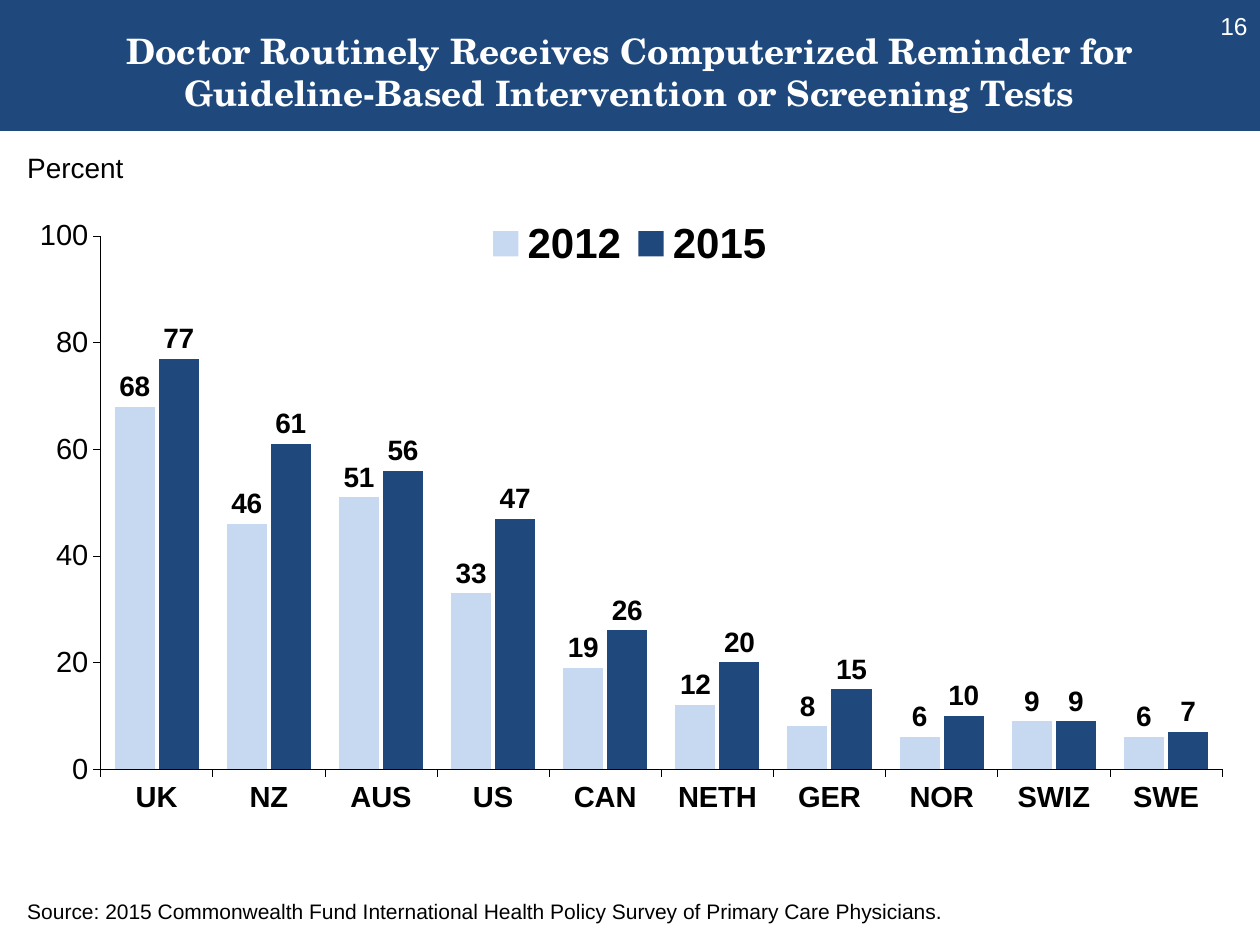
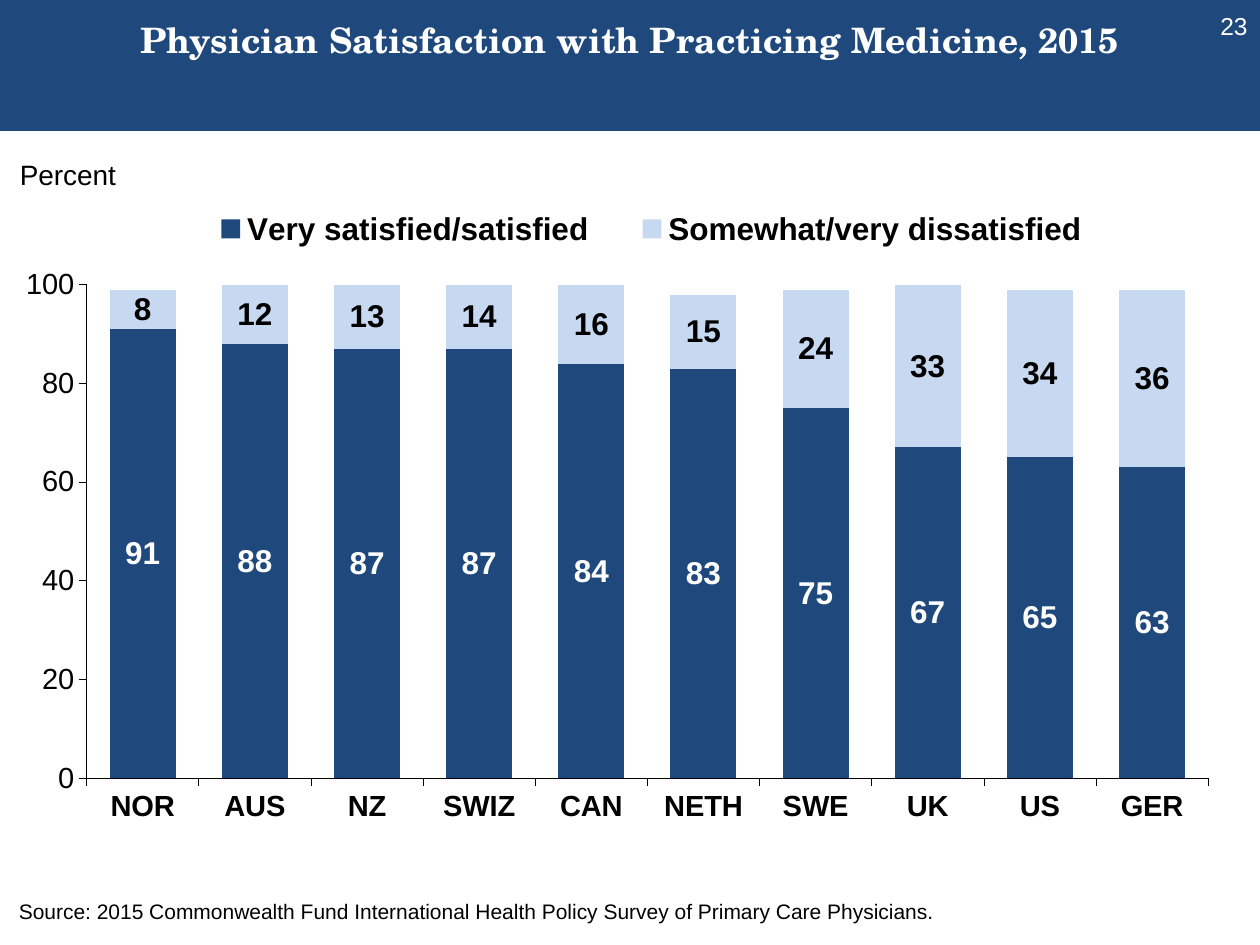
from dataclasses import dataclass

import lxml.etree
import pptx
import pptx.chart.data
import pptx.dml.color
import pptx.enum.chart
import pptx.enum.shapes
import pptx.enum.text
import pptx.oxml.ns
import pptx.util

Cm = pptx.util.Cm
Pt = pptx.util.Pt
RGBColor = pptx.dml.color.RGBColor
ChartType = pptx.enum.chart.XL_CHART_TYPE
LabelPosition = pptx.enum.chart.XL_LABEL_POSITION
Align = pptx.enum.text.PP_ALIGN
Anchor = pptx.enum.text.MSO_ANCHOR

NAVY = RGBColor(0x1F, 0x49, 0x7D)
PALE_BLUE = RGBColor(0xC6, 0xD9, 0xF1)
WHITE = RGBColor(0xFF, 0xFF, 0xFF)
BLACK = RGBColor(0, 0, 0)
BODY_FONT = "Arial"
TITLE_FONT = "TeX Gyre Schola"
SLIDE_WIDTH = 25.4
SOURCE = (
    "Source: 2015 Commonwealth Fund International Health Policy Survey "
    "of Primary Care Physicians."
)


@dataclass(frozen=True)
class Box:
    left: float
    top: float
    width: float
    height: float

    def lengths(self):
        return Cm(self.left), Cm(self.top), Cm(self.width), Cm(self.height)


@dataclass(frozen=True)
class Answer:
    name: str
    percents: tuple[int, ...]
    color: RGBColor
    label_color: RGBColor = BLACK


@dataclass(frozen=True)
class SurveyChart:
    kind: ChartType
    area: Box
    plot: Box
    legend: Box
    legend_size: int
    label_size: int
    label_position: LabelPosition
    overlap: int
    countries: tuple[str, ...]
    answers: tuple[Answer, ...]


@dataclass(frozen=True)
class SurveySlide:
    title: str
    title_box: Box
    number: str
    unit_box: Box
    source_box: Box
    chart: SurveyChart


SLIDES = (
    SurveySlide(
        title="Doctor Routinely Receives Computerized Reminder for\v"
        "Guideline-Based Intervention or Screening Tests",
        title_box=Box(0, 0.46, SLIDE_WIDTH, 2.03),
        number="16",
        unit_box=Box(0.3, 2.92, 11.48, 0.94),
        source_box=Box(0.3, 17.98, 20.65, 0.76),
        chart=SurveyChart(
            kind=ChartType.COLUMN_CLUSTERED,
            area=Box(0.76, 4.06, 23.88, 13.16),
            plot=Box(0.054, 0.053, 0.947, 0.817),
            legend=Box(0.37, 0.02, 0.26, 0.09),
            legend_size=24,
            label_size=16,
            label_position=LabelPosition.OUTSIDE_END,
            overlap=-10,
            countries=("UK", "NZ", "AUS", "US", "CAN", "NETH", "GER", "NOR", "SWIZ", "SWE"),
            answers=(
                Answer("2012", (68, 46, 51, 33, 19, 12, 8, 6, 9, 6), PALE_BLUE),
                Answer("2015", (77, 61, 56, 47, 26, 20, 15, 10, 9, 7), NAVY),
            ),
        ),
    ),
    SurveySlide(
        title="Physician Satisfaction with Practicing Medicine, 2015",
        title_box=Box(0, 0.25, SLIDE_WIDTH, 1.27),
        number="23",
        unit_box=Box(0.15, 3.05, 10.03, 0.94),
        source_box=Box(0.13, 17.98, 20.65, 0.76),
        chart=SurveyChart(
            kind=ChartType.COLUMN_STACKED,
            area=Box(0.48, 3.99, 23.88, 13.16),
            plot=Box(0.054, 0.133, 0.947, 0.756),
            legend=Box(0.13, 0.01, 0.8, 0.075),
            legend_size=18,
            label_size=18,
            label_position=LabelPosition.CENTER,
            overlap=100,
            countries=("NOR", "AUS", "NZ", "SWIZ", "CAN", "NETH", "SWE", "UK", "US", "GER"),
            answers=(
                Answer("Very satisfied/satisfied",
                       (91, 88, 87, 87, 84, 83, 75, 67, 65, 63), NAVY, WHITE),
                Answer("Somewhat/very dissatisfied",
                       (8, 12, 13, 14, 16, 15, 24, 33, 34, 36), PALE_BLUE),
            ),
        ),
    ),
)


def style_font(font, size: float, color: RGBColor = BLACK, bold: bool = False,
               name: str = BODY_FONT) -> None:
    font.name = name
    font.size = Pt(size)
    font.bold = bold
    font.color.rgb = color


def add_text(slide, text: str, box: Box, size: float, color: RGBColor = BLACK,
             align: Align = Align.LEFT, anchor: Anchor = Anchor.TOP) -> None:
    frame = slide.shapes.add_textbox(*box.lengths()).text_frame
    frame.word_wrap = True
    frame.vertical_anchor = anchor
    frame.text = text
    paragraph = frame.paragraphs[0]
    paragraph.alignment = align
    style_font(paragraph.runs[0].font, size, color)


def add_band(slide) -> None:
    band = slide.shapes.add_shape(
        pptx.enum.shapes.MSO_SHAPE.RECTANGLE, *Box(0, 0, SLIDE_WIDTH, 2.64).lengths())
    band.shadow.inherit = False
    band.fill.solid()
    band.fill.fore_color.rgb = NAVY
    band.line.fill.background()
    slide.shapes._spTree.insert(2, band._element)


def set_title(slide, text: str, box: Box) -> None:
    title = slide.shapes.title
    title.left, title.top, title.width, title.height = box.lengths()
    frame = title.text_frame
    frame.auto_size = pptx.enum.text.MSO_AUTO_SIZE.NONE
    frame.vertical_anchor = Anchor.TOP
    frame.text = text
    paragraph = frame.paragraphs[0]
    paragraph.alignment = Align.CENTER
    for run in paragraph.runs:
        style_font(run.font, 20, WHITE, True, TITLE_FONT)


def place_part(part, index: int, box: Box, inner: bool = False) -> None:
    qn = pptx.oxml.ns.qn
    for automatic in part.findall(qn("c:layout")):
        part.remove(automatic)
    layout = lxml.etree.Element(qn("c:layout"))
    manual = lxml.etree.SubElement(layout, qn("c:manualLayout"))
    settings = [("layoutTarget", "inner")] if inner else []
    settings += [("xMode", "edge"), ("yMode", "edge"), ("x", box.left),
                 ("y", box.top), ("w", box.width), ("h", box.height)]
    for tag, value in settings:
        lxml.etree.SubElement(manual, qn(f"c:{tag}")).set("val", str(value))
    part.insert(index, layout)


def style_axis(axis, bold: bool) -> None:
    axis.has_major_gridlines = False
    axis.major_tick_mark = pptx.enum.chart.XL_TICK_MARK.OUTSIDE
    axis.minor_tick_mark = pptx.enum.chart.XL_TICK_MARK.NONE
    axis.format.line.color.rgb = BLACK
    axis.format.line.width = Pt(0.3)
    style_font(axis.tick_labels.font, 16.6, bold=bold)


def add_survey_chart(slide, survey: SurveyChart) -> None:
    data = pptx.chart.data.CategoryChartData(number_format="0")
    data.categories = survey.countries
    for answer in survey.answers:
        data.add_series(answer.name, answer.percents)
    chart = slide.shapes.add_chart(survey.kind, *survey.area.lengths(), data).chart
    style_font(chart.font, 11)
    chart.has_title = False

    style_axis(chart.category_axis, True)
    percent_axis = chart.value_axis
    style_axis(percent_axis, False)
    percent_axis.minimum_scale = 0
    percent_axis.maximum_scale = 100
    percent_axis.major_unit = 20
    percent_axis.tick_labels.number_format = "0"
    percent_axis.tick_labels.number_format_is_linked = False

    chart.has_legend = True
    chart.legend.position = pptx.enum.chart.XL_LEGEND_POSITION.TOP
    chart.legend.include_in_layout = False
    style_font(chart.legend.font, survey.legend_size, bold=True)
    place_part(chart.legend._element, 1, survey.legend)
    place_part(chart._chartSpace.chart.plotArea, 0, survey.plot, inner=True)

    columns = chart.plots[0]
    columns.gap_width = 70
    columns.overlap = survey.overlap
    columns.vary_by_categories = False
    for series, answer in zip(columns.series, survey.answers):
        series.format.fill.solid()
        series.format.fill.fore_color.rgb = answer.color
        series.invert_if_negative = False
        labels = series.data_labels
        labels.show_value = True
        labels.position = survey.label_position
        style_font(labels.font, survey.label_size, answer.label_color, True)


def add_survey_slide(deck, content: SurveySlide) -> None:
    slide = deck.slides.add_slide(deck.slide_layouts.get_by_name("Title Only"))
    add_band(slide)
    set_title(slide, content.title, content.title_box)
    add_text(slide, content.number, Box(19.48, 0, 5.92, 1.02), 14, WHITE,
             Align.RIGHT, Anchor.MIDDLE)
    add_survey_chart(slide, content.chart)
    add_text(slide, "Percent", content.unit_box, 16)
    add_text(slide, SOURCE, content.source_box, 12)


def main() -> None:
    deck = pptx.Presentation()
    deck.slide_width = Cm(SLIDE_WIDTH)
    deck.slide_height = Cm(19.05)
    for content in SLIDES:
        add_survey_slide(deck, content)
    deck.save("out.pptx")


if __name__ == "__main__":
    main()
